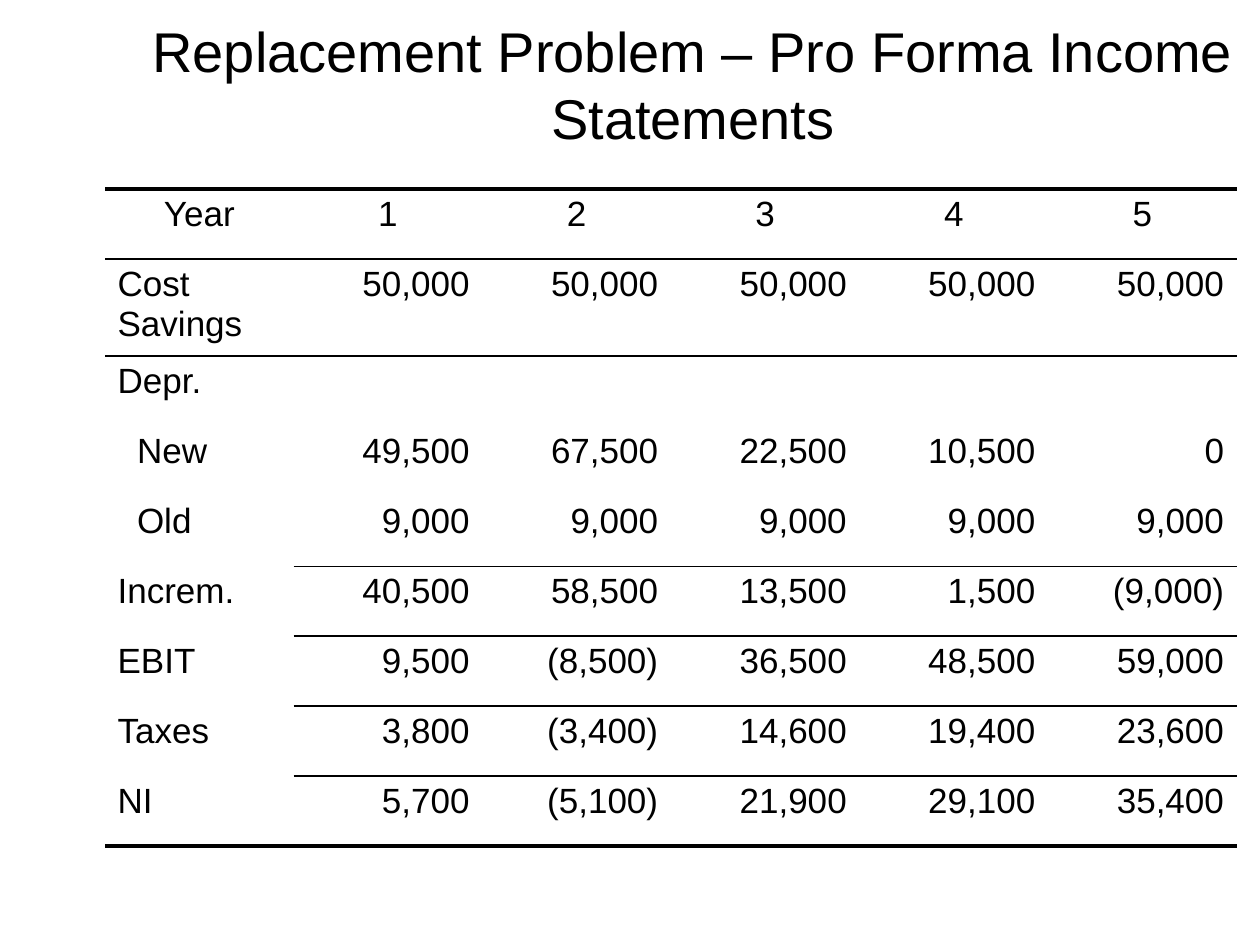
from dataclasses import dataclass

from lxml import etree
from pptx import Presentation
from pptx.dml.color import RGBColor
from pptx.enum.text import MSO_ANCHOR, PP_ALIGN
from pptx.oxml.ns import qn
from pptx.util import Pt

LEFT, CENTER, RIGHT = PP_ALIGN.LEFT, PP_ALIGN.CENTER, PP_ALIGN.RIGHT
MIDDLE = MSO_ANCHOR.MIDDLE

COLORS = {"text": "000000", "rule": "000000"}
FONT = "Arial"
NO_STYLE = "{2D5ABB26-0587-4C30-8999-92F81FD0307C}"
COL_W, ROW_H, TALL_ROW_H = 107.8, 40, 55.4
CELL_MARGIN, INDENT = 7.2, 11.1


@dataclass
class Line:
    label: str
    values: tuple = ("",) * 5
    indent: float = 0
    height: float = ROW_H
    label_align: int = LEFT
    value_align: int = RIGHT


@dataclass
class Rule:
    boundary: int
    weight: float
    first_col: int = 0


LINES = [
    Line("Year", ("1", "2", "3", "4", "5"), label_align=CENTER, value_align=CENTER),
    Line("Cost Savings", ("50,000",) * 5, height=TALL_ROW_H),
    Line("Depr."),
    Line("New", ("49,500", "67,500", "22,500", "10,500", "0"), indent=INDENT),
    Line("Old", ("9,000",) * 5, indent=INDENT),
    Line("Increm.", ("40,500", "58,500", "13,500", "1,500", "(9,000)")),
    Line("EBIT", ("9,500", "(8,500)", "36,500", "48,500", "59,000")),
    Line("Taxes", ("3,800", "(3,400)", "14,600", "19,400", "23,600")),
    Line("NI", ("5,700", "(5,100)", "21,900", "29,100", "35,400")),
]
RULES = [Rule(0, 2.25), Rule(1, 1), Rule(5, 0.5, 1), Rule(6, 1, 1),
         Rule(8, 1, 1), Rule(9, 2.25)]


def write(tf, text: str, size: float, align) -> None:
    p = tf.paragraphs[0]
    p.text = text
    p.alignment = align
    p.font.name = FONT
    p.font.size = Pt(size)
    p.font.color.rgb = RGBColor.from_string(COLORS["text"])


def add_border(cell, tag: str, weight: float) -> None:
    ln = etree.Element(qn(tag), w=str(Pt(weight)))
    fill = etree.SubElement(ln, qn("a:solidFill"))
    etree.SubElement(fill, qn("a:srgbClr"), val=COLORS["rule"])
    cell._tc.get_or_add_tcPr().insert(0, ln)


def draw_title(slide, text: str) -> None:
    sp = slide.shapes.add_textbox(Pt(60), Pt(12), Pt(672), Pt(72))
    tf = sp.text_frame
    tf.word_wrap = True
    tf.vertical_anchor = MIDDLE
    write(tf, text, 32, CENTER)


def draw_line(table, row: int, line: Line) -> None:
    table.rows[row].height = Pt(line.height)
    for col, text in enumerate((line.label, *line.values)):
        cell = table.cell(row, col)
        cell.fill.background()
        write(cell.text_frame, text, 20, line.value_align if col else line.label_align)
    table.cell(row, 0).margin_left = Pt(CELL_MARGIN + line.indent)


def draw_rule(table, rule: Rule) -> None:
    for col in range(rule.first_col, len(table.columns)):
        if rule.boundary > 0:
            add_border(table.cell(rule.boundary - 1, col), "a:lnB", rule.weight)
        if rule.boundary < len(table.rows):
            add_border(table.cell(rule.boundary, col), "a:lnT", rule.weight)


def draw_statement(slide, lines: list[Line], rules: list[Rule]) -> None:
    cols = 1 + len(lines[0].values)
    height = sum(line.height for line in lines)
    table = slide.shapes.add_table(len(lines), cols, Pt(60), Pt(108),
                                   Pt(COL_W * cols), Pt(height)).table
    table.first_row = table.horz_banding = False
    table._tbl.tblPr.find(qn("a:tableStyleId")).text = NO_STYLE
    for column in table.columns:
        column.width = Pt(COL_W)
    for row, line in enumerate(lines):
        draw_line(table, row, line)
    for rule in sorted(rules, key=lambda r: r.boundary, reverse=True):
        draw_rule(table, rule)


def main() -> None:
    prs = Presentation()
    prs.slide_width, prs.slide_height = Pt(720), Pt(540)
    s = prs.slides.add_slide(prs.slide_layouts[6])
    draw_title(s, "Replacement Problem – Pro Forma Income Statements")
    draw_statement(s, LINES, RULES)
    prs.save("out.pptx")


if __name__ == "__main__":
    main()
